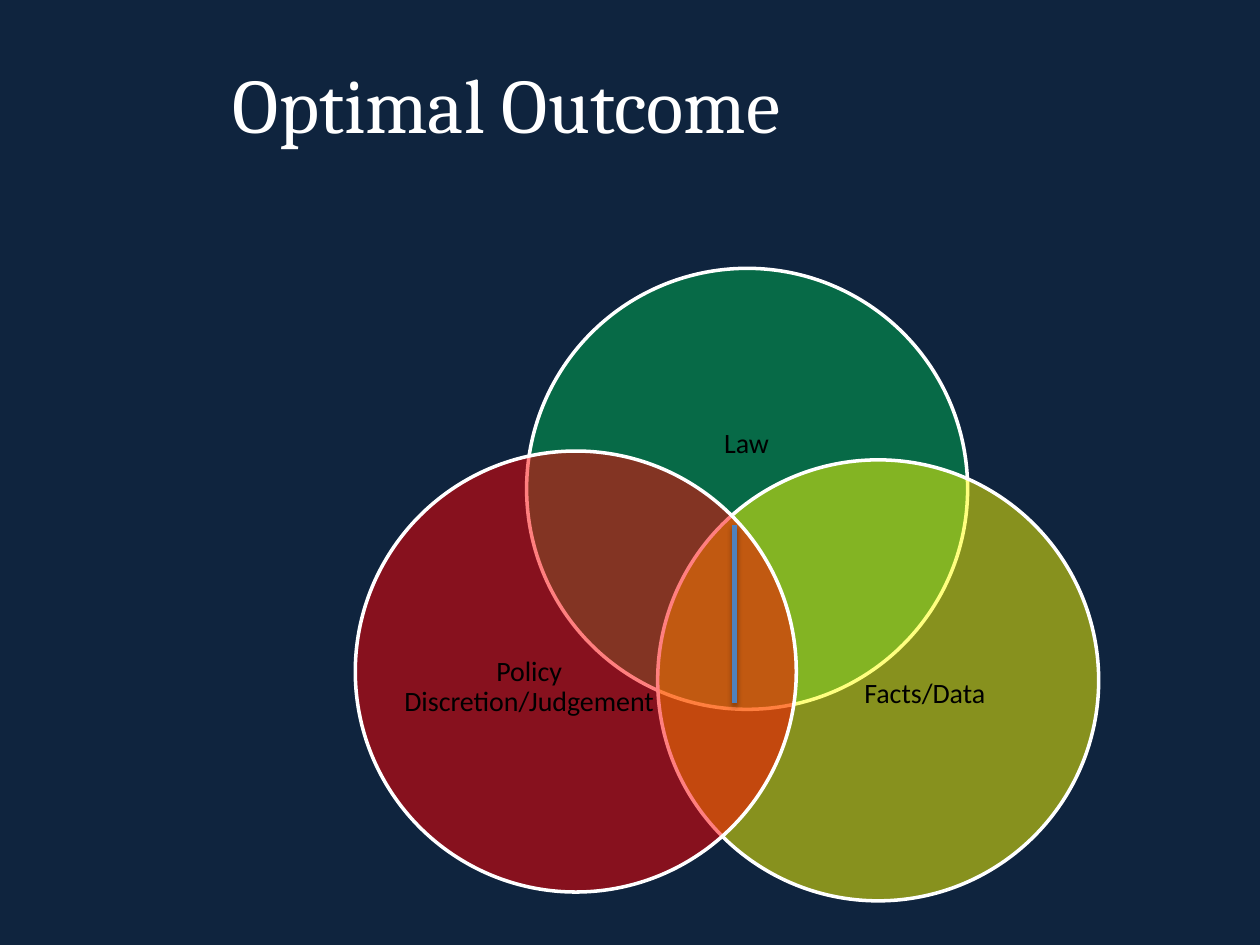
from lxml.etree import SubElement
from pptx import Presentation
from pptx.dml.color import RGBColor
from pptx.enum.shapes import MSO_CONNECTOR as CONN, MSO_SHAPE as SHAPE
from pptx.enum.text import MSO_ANCHOR as ANCHOR, PP_ALIGN as ALIGN
from pptx.oxml.ns import qn
from pptx.util import Inches, Pt

COLORS = {
    "background": "0F243E", "white": "FFFFFF", "black": "000000",
    "law": "00B050", "facts": "FFFF00", "policy": "FF0000", "divider": "4F81BD",
}
COLS, ROWS = 100, 75
CELL = Inches(10) // COLS
DIAMETER = 35

# Circle offset in the diagram, then label box in the circle, all in cells
CIRCLES = [
    ("Law", "law", (13.6, 0), (4.6, 6.1, 25.7, 15.7)),
    ("Facts/Data", "facts", (24, 15.2), (10.7, 9, 21, 19.3)),
    ("Policy Discretion/Judgement", "policy", (0, 14.5), (3.3, 9.1, 21, 19.3)),
]


def rgb(name):
    return RGBColor.from_string(COLORS[name])


def cells(*values):
    return [round(v * CELL) for v in values]


def add_alpha(color, percent):
    SubElement(color, qn("a:alpha"), val=str(percent * 1000))


def add_text(shapes, box, text, font, size, color, align=ALIGN.LEFT):
    tb = shapes.add_textbox(*cells(*box))
    tf = tb.text_frame
    tf.word_wrap = True
    tf.vertical_anchor = ANCHOR.MIDDLE
    p = tf.paragraphs[0]
    p.text = text
    p.alignment = align
    f = p.runs[0].font
    f.name, f.size, f.color.rgb = font, Pt(size), rgb(color)
    return tf


def add_circle(shapes, x, y, fill, text, label):
    s = shapes.add_shape(SHAPE.OVAL, *cells(x, y, DIAMETER, DIAMETER))
    s.shadow.inherit = False
    s.fill.solid()
    s.fill.fore_color.rgb = rgb(fill)
    add_alpha(s.fill._xPr.find(".//" + qn("a:srgbClr")), 50)
    s.line.color.rgb = rgb("white")
    s.line.width = Pt(2)

    dx, dy, w, h = label
    tf = add_text(shapes, (x + dx, y + dy, w, h), text, "Calibri", 16, "black", ALIGN.CENTER)
    tf.margin_left = tf.margin_right = tf.margin_top = tf.margin_bottom = 0
    tf.paragraphs[0].line_spacing = 0.9


def add_divider(shapes, x, top, bottom):
    """Draw the vertical line through the overlap, with a soft shadow below it."""
    c = shapes.add_connector(CONN.STRAIGHT, *cells(x, top, x, bottom))
    c.line.color.rgb = rgb("divider")
    c.line.width = Pt(3)
    effects = SubElement(c._element.spPr, qn("a:effectLst"))
    shadow = SubElement(effects, qn("a:outerShdw"), blurRad=str(Pt(3.1)),
                        dist=str(Pt(1.8)), dir="5400000", rotWithShape="0")
    add_alpha(SubElement(shadow, qn("a:srgbClr"), val=COLORS["black"]), 35)


def add_venn(slide, left, top):
    group = slide.shapes.add_group_shape()
    for text, fill, (dx, dy), label in CIRCLES:
        add_circle(group.shapes, left + dx, top + dy, fill, text, label)
    add_divider(slide.shapes, left + 30.1, top + 20.4, top + 34.5)


def main():
    prs = Presentation()
    prs.slide_width, prs.slide_height = cells(COLS, ROWS)
    slide = prs.slides.add_slide(prs.slide_layouts[6])
    slide.background.fill.solid()
    slide.background.fill.fore_color.rgb = rgb("background")
    add_text(slide.shapes, (17.5, 3, 77.5, 10.3), "Optimal Outcome", "Cambria", 44, "white")
    add_venn(slide, 28.2, 21.3)
    prs.save("out.pptx")


if __name__ == "__main__":
    main()
